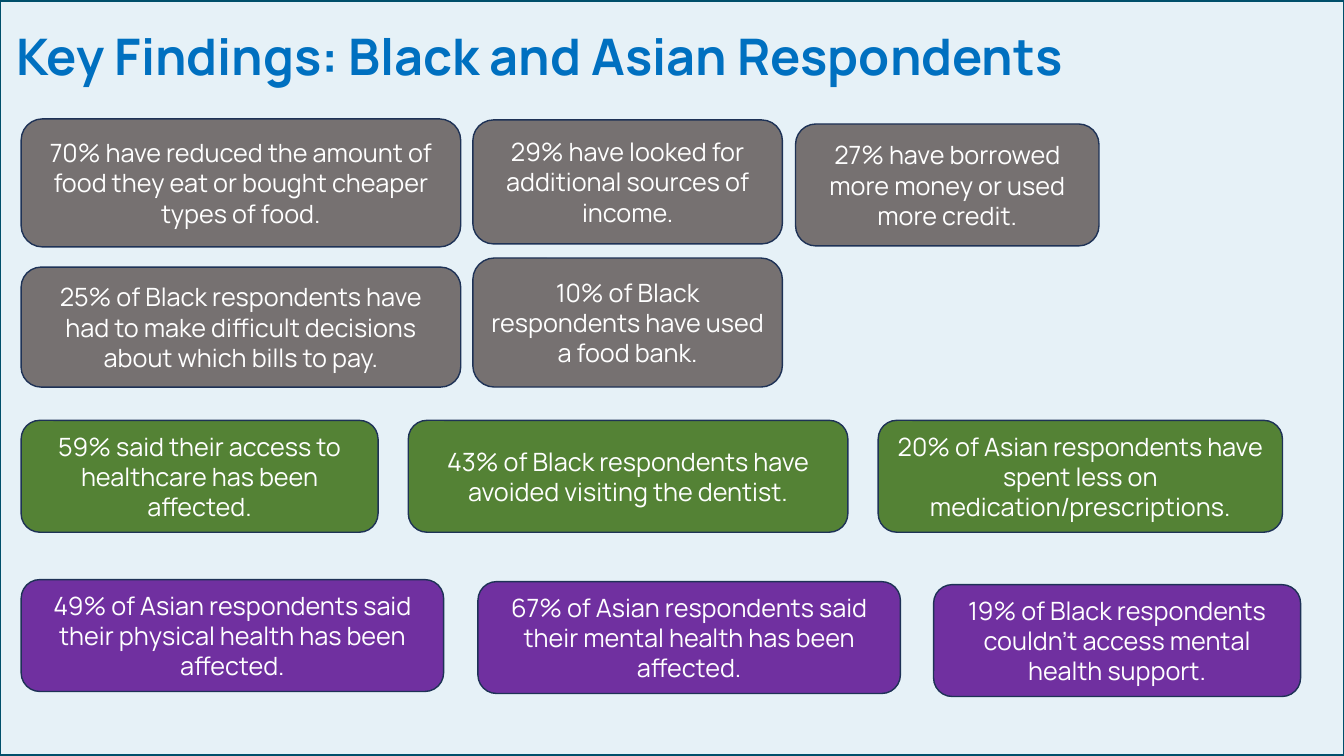
from pptx import Presentation
from pptx.dml.color import RGBColor
from pptx.enum.shapes import MSO_SHAPE
from pptx.enum.text import MSO_ANCHOR, PP_ALIGN

RECT = MSO_SHAPE.RECTANGLE
ROUND = MSO_SHAPE.ROUNDED_RECTANGLE
LEFT, CENTER = PP_ALIGN.LEFT, PP_ALIGN.CENTER
TOP, MIDDLE = MSO_ANCHOR.TOP, MSO_ANCHOR.MIDDLE
PX = 9144
PT = 12700
GREY, GREEN, PURPLE = "767171", "548235", "7030A0"


def color(code):
    return RGBColor.from_string(code)


def write(shape, text, size=18, ink="FFFFFF", bold=False, align=CENTER,
          anchor=MIDDLE, pad=(10, 5)):
    frame = shape.text_frame
    frame.word_wrap = True
    frame.vertical_anchor = anchor
    frame.margin_left = frame.margin_right = pad[0] * PX
    frame.margin_top = frame.margin_bottom = pad[1] * PX
    para = frame.paragraphs[0]
    para.alignment = align
    run = para.add_run()
    run.text = text
    run.font.name = "Manrope"
    run.font.size = size * PT
    run.font.bold = bold
    run.font.color.rgb = color(ink)


deck = Presentation()
deck.slide_width = 1333 * PX
deck.slide_height = 750 * PX
slide = deck.slides.add_slide(deck.slide_layouts[6])
slide.background.fill.solid()
slide.background.fill.fore_color.rgb = color("E6F1F7")
shapes = slide.shapes

border = shapes.add_shape(RECT, -1 * PX, 0, 1335 * PX, 750 * PX)
border.shadow.inherit = False
border.fill.background()
border.line.color.rgb = color("004F6B")
border.line.width = 3 * PT

title = shapes.add_textbox(0, 13 * PX, 1161 * PX, 84 * PX)
write(title, "Key Findings: Black and Asian Respondents", size=36,
      ink="0070C0", bold=True, align=LEFT, anchor=TOP, pad=(16, 12))

cards = [
    (GREY, 21, 118, 436, 127, "70% have reduced the amount of food they eat or bought cheaper types of food."),
    (GREY, 469, 119, 307, 123, "29% have looked for additional sources of income."),
    (GREY, 789, 123, 301, 121, "27% have borrowed more money or used more credit."),
    (GREY, 21, 265, 436, 119, "25% of Black respondents have had to make difficult decisions about which bills to pay."),
    (GREY, 469, 256, 307, 128, "10% of Black respondents have used a food bank."),
    (GREEN, 21, 417, 354, 111, "59% said their access to healthcare has been affected."),
    (GREEN, 405, 417, 436, 111, "43% of Black respondents have avoided visiting the dentist."),
    (GREEN, 871, 417, 401, 111, "20% of Asian respondents have spent less on medication/prescriptions."),
    (PURPLE, 21, 575, 419, 111, "49% of Asian respondents said their physical health has been affected."),
    (PURPLE, 474, 577, 419, 111, "67% of Asian respondents said their mental health has been affected."),
    (PURPLE, 926, 580, 364, 111, "19% of Black respondents couldn’t access mental health support."),
]
for fill, left, top, width, height, text in cards:
    card = shapes.add_shape(ROUND, left * PX, top * PX, width * PX, height * PX)
    card.shadow.inherit = False
    card.fill.solid()
    card.fill.fore_color.rgb = color(fill)
    card.line.color.rgb = color("1E3256")
    card.line.width = PT
    write(card, text)

deck.save("out.pptx")
